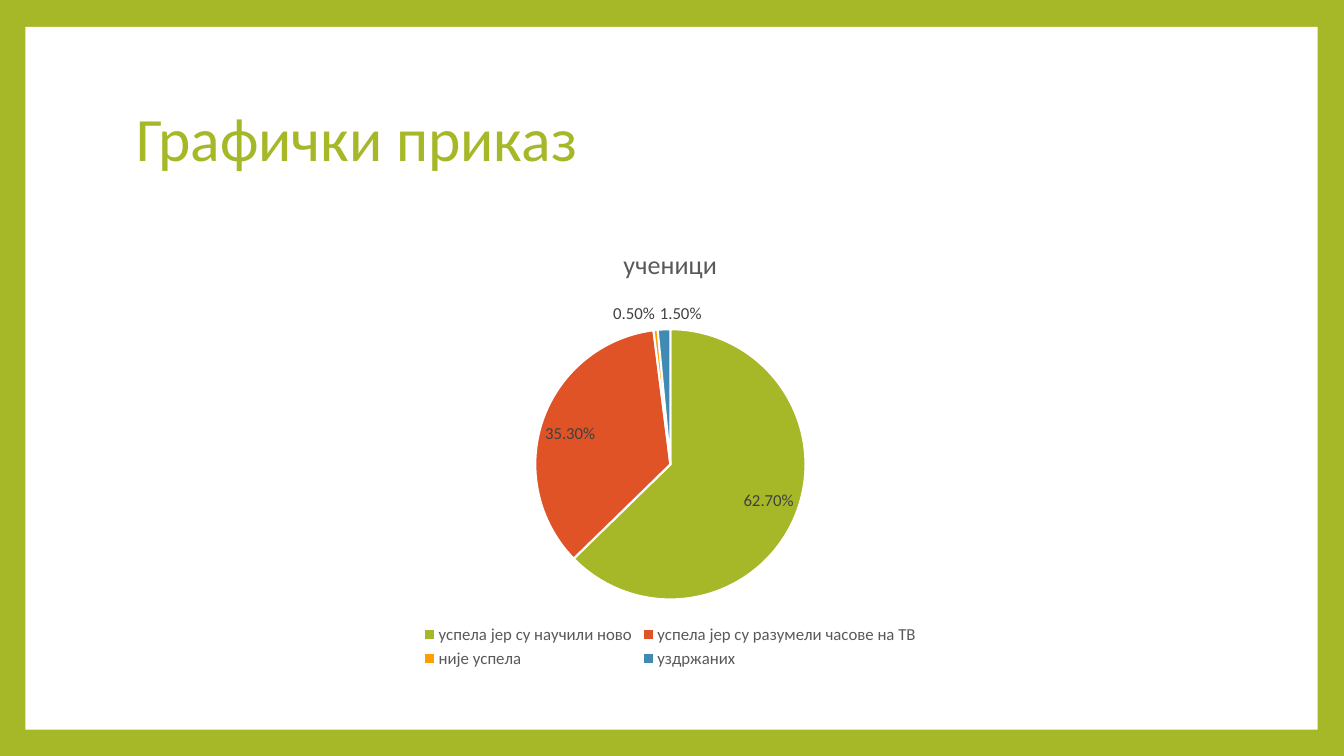
from pptx import Presentation
from pptx import util as u
from pptx.chart.data import CategoryChartData
from pptx.dml.color import RGBColor
from pptx.enum import chart as charts, shapes, text

GREEN, WHITE, GREY, DARK = "A6B727", "FFFFFF", "595959", "404040"
SLICES = [
    ("успела јер су научили ново", 0.627, GREEN),
    ("успела јер су разумели часове на ТВ", 0.353, "DF5327"),
    ("није успела", 0.005, "FE9E00"),
    ("уздржаних", 0.015, "418AB3"),
]


def paint(fill, color):
    fill.solid()
    fill.fore_color.rgb = RGBColor.from_string(color)


def set_attrs(obj, values):
    for name, value in values.items():
        setattr(obj, name, value)


def set_font(font, size, color):
    set_attrs(font, {"name": "Calibri", "size": u.Pt(size), "bold": False})
    paint(font.fill, color)


def add_panel(s, box, color):
    sp = s.shapes.add_shape(shapes.MSO_SHAPE.RECTANGLE, *map(u.Cm, box))
    sp.shadow.inherit = False
    paint(sp.fill, color)
    sp.line.fill.background()


def add_title(s, box, words):
    tf = s.shapes.add_textbox(*map(u.Cm, box)).text_frame
    set_attrs(tf, {"word_wrap": True, "vertical_anchor": text.MSO_ANCHOR.MIDDLE})
    p = tf.paragraphs[0]
    p.line_spacing = 0.9
    r = p.add_run()
    r.text = words
    set_font(r.font, 44, GREEN)


def add_pie(s, box, name, slices):
    labels, values, colors = zip(*slices)
    data = CategoryChartData(number_format="0.00%")
    data.categories = labels
    data.add_series(name, values)
    frame = s.shapes.add_chart(charts.XL_CHART_TYPE.PIE, *map(u.Cm, box), data)
    chart = frame.chart
    set_font(chart.font, 10, "000000")
    set_attrs(chart, {"has_title": True, "has_legend": True})

    p = chart.chart_title.text_frame.paragraphs[0]
    r = p.add_run()
    r.text = name
    set_font(r.font, 18.6, GREY)

    set_attrs(chart.legend, {
        "position": charts.XL_LEGEND_POSITION.BOTTOM,
        "include_in_layout": False,
    })
    set_font(chart.legend.font, 12, GREY)

    plot = chart.plots[0]
    set_attrs(plot, {"vary_by_categories": True, "has_data_labels": True})
    set_attrs(plot.data_labels, {
        "show_value": True,
        "show_percentage": False,
        "number_format": "0.00%",
        "number_format_is_linked": False,
        "position": charts.XL_LABEL_POSITION.BEST_FIT,
    })
    set_font(plot.data_labels.font, 12, DARK)

    for i, color in enumerate(colors):
        fmt = plot.series[0].points[i].format
        paint(fmt.fill, color)
        paint(fmt.line.fill, WHITE)
        fmt.line.width = u.Pt(1.5)


def main():
    prs = Presentation()
    set_attrs(prs, {"slide_width": u.Cm(33.87), "slide_height": u.Cm(19.05)})
    s = prs.slides.add_slide(prs.slide_layouts[6])
    paint(s.background.fill, GREEN)
    add_panel(s, (0.64, 0.68, 32.57, 17.71), WHITE)
    add_title(s, (3.18, 1.7, 27.43, 3.76), "Графички приказ")
    add_pie(s, (3.18, 5.72, 27.43, 11.23), "ученици", SLICES)
    prs.save("out.pptx")


if __name__ == "__main__":
    main()
